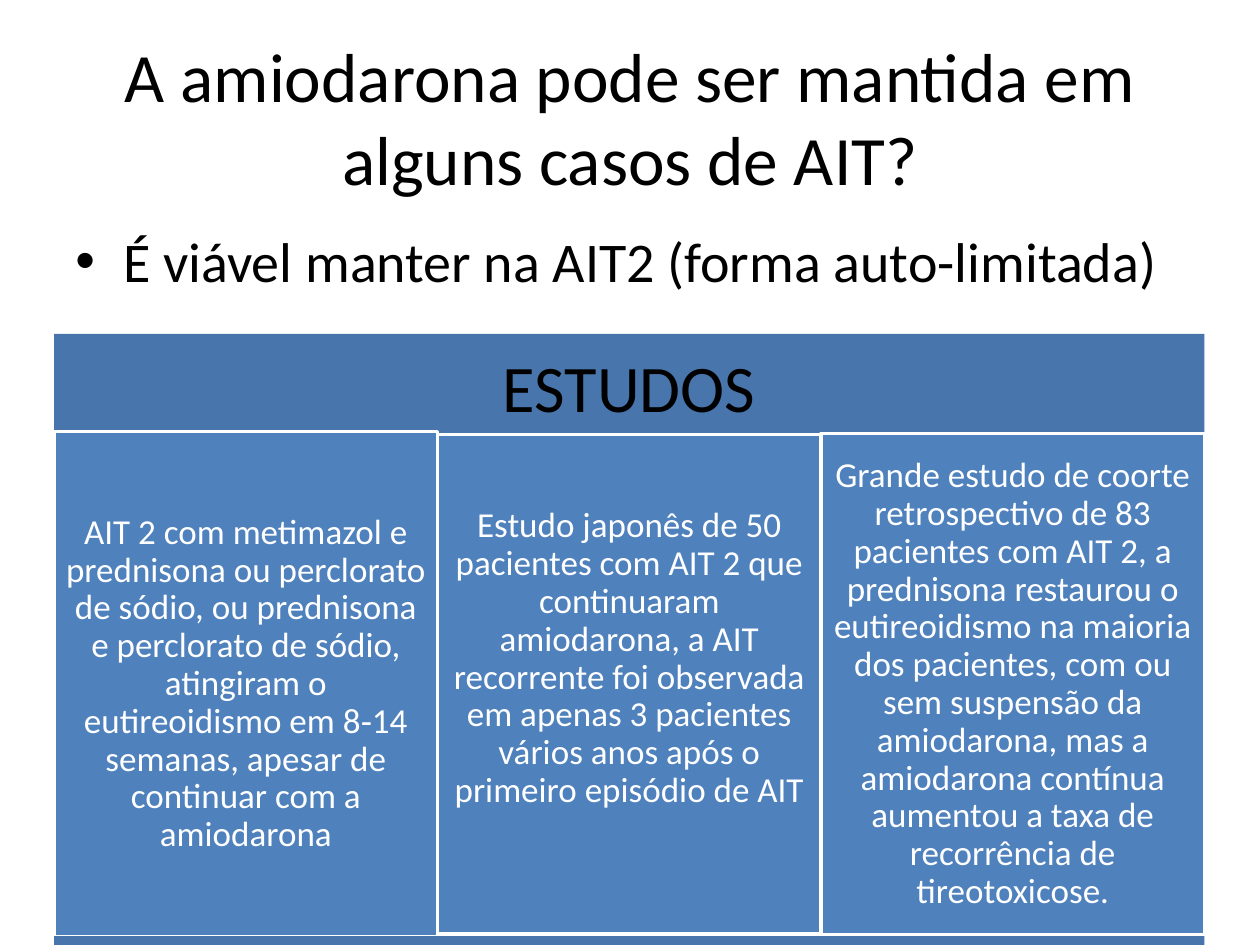
from dataclasses import dataclass

from lxml import etree
from pptx import Presentation
from pptx.dml.color import RGBColor
from pptx.enum.shapes import MSO_SHAPE
from pptx.enum.text import MSO_ANCHOR, PP_ALIGN
from pptx.oxml.ns import qn
from pptx.util import Inches, Pt

RECTANGLE = MSO_SHAPE.RECTANGLE
CENTER, LEFT = PP_ALIGN.CENTER, PP_ALIGN.LEFT
MIDDLE, TOP = MSO_ANCHOR.MIDDLE, MSO_ANCHOR.TOP


@dataclass(frozen=True)
class Theme:
    font: str = "Calibri"
    ink: str = "000000"
    paper: str = "FFFFFF"
    band: str = "4875AC"
    panel: str = "4F81BD"
    title_size: float = 39.6
    bullet_size: float = 32
    heading_size: float = 38
    study_size: float = 20


THEME = Theme()

TITLE = "A amiodarona pode ser mantida em alguns casos de AIT?"
BULLET = "É viável manter na AIT2 (forma auto-limitada)"
HEADING = "ESTUDOS"
# Text, panel height, extra room below the text
STUDIES = [
    ("AIT 2 com metimazol e prednisona ou perclorato de sódio, ou prednisona e "
     "perclorato de sódio, atingiram o eutireoidismo em 8‐14 semanas, apesar de "
     "continuar com a amiodarona", 4.01, 0),
    ("Estudo japonês de 50 pacientes com AIT 2 que continuaram amiodarona, a AIT "
     "recorrente foi observada em apenas 3 pacientes vários anos após o primeiro "
     "episódio de AIT", 3.96, 0.4),
    ("Grande estudo de coorte retrospectivo de 83 pacientes com AIT 2, a prednisona "
     "restaurou o eutireoidismo na maioria dos pacientes, com ou sem suspensão da "
     "amiodarona, mas a amiodarona contínua aumentou a taxa de recorrência de "
     "tireotoxicose.", 3.98, 0),
]


def write(shape, text, size, color, align=CENTER, anchor=MIDDLE,
          insets=(0.1, 0.05, 0.1, 0.05), spacing=None):
    """Fill a shape with one paragraph; insets are left, top, right, bottom."""
    frame = shape.text_frame
    frame.word_wrap = True
    frame.vertical_anchor = anchor
    (frame.margin_left, frame.margin_top,
     frame.margin_right, frame.margin_bottom) = map(Inches, insets)
    para = frame.paragraphs[0]
    para.text = text
    para.alignment = align
    para.line_spacing = spacing
    para.font.name = THEME.font
    para.font.size = Pt(size)
    para.font.color.rgb = RGBColor.from_string(color)
    return para


def add_panel(page, box, fill, outline=None):
    panel = page.shapes.add_shape(RECTANGLE, *map(Inches, box))
    panel.shadow.inherit = False
    panel.fill.solid()
    panel.fill.fore_color.rgb = RGBColor.from_string(fill)
    if outline:
        panel.line.color.rgb = RGBColor.from_string(outline)
        panel.line.width = Pt(2)
    else:
        panel.line.fill.background()
    return panel


def add_title(page, box):
    write(page.shapes.add_textbox(*map(Inches, box)), TITLE, THEME.title_size, THEME.ink)


def add_bullet(page, box):
    para = write(page.shapes.add_textbox(*map(Inches, box)), BULLET,
                 THEME.bullet_size, THEME.ink, LEFT, TOP)
    para.space_before = Pt(0.2 * THEME.bullet_size)
    # Hanging bullet
    properties = para._p.get_or_add_pPr()
    properties.set("marL", str(Inches(0.38)))
    properties.set("indent", str(-Inches(0.38)))
    etree.SubElement(properties, qn("a:buFont")).set("typeface", "Arial")
    etree.SubElement(properties, qn("a:buChar")).set("char", "•")


def add_studies(page, box):
    left, top, width, height = box
    header_height, footer_height = 0.91, 0.07

    # Heading band
    header = add_panel(page, (left, top, width, header_height), THEME.band)
    write(header, HEADING, THEME.heading_size, THEME.ink, insets=[0.16] * 4, spacing=0.9)

    # Study panels, equal in width and centred on one line
    column = width / len(STUDIES)
    center = top + 2.78
    for index, (text, panel_height, room) in enumerate(STUDIES):
        panel = add_panel(page, (left + index * column, center - panel_height / 2,
                                 column, panel_height), THEME.panel, THEME.paper)
        write(panel, text, THEME.study_size, THEME.paper,
              insets=(0.08, 0.08, 0.08, 0.08 + room), spacing=0.9)

    # Closing band
    add_panel(page, (left, top + height - footer_height, width, footer_height), THEME.band)


def main():
    deck = Presentation()
    deck.slide_width, deck.slide_height = Inches(10), Inches(7.5)
    page = deck.slides.add_slide(deck.slide_layouts[6])
    add_title(page, (0.5, 0.3, 9, 1.25))
    add_bullet(page, (0.5, 1.75, 9, 5.54))
    add_studies(page, (0.43, 2.65, 9.13, 4.85))
    deck.save("out.pptx")


if __name__ == "__main__":
    main()
